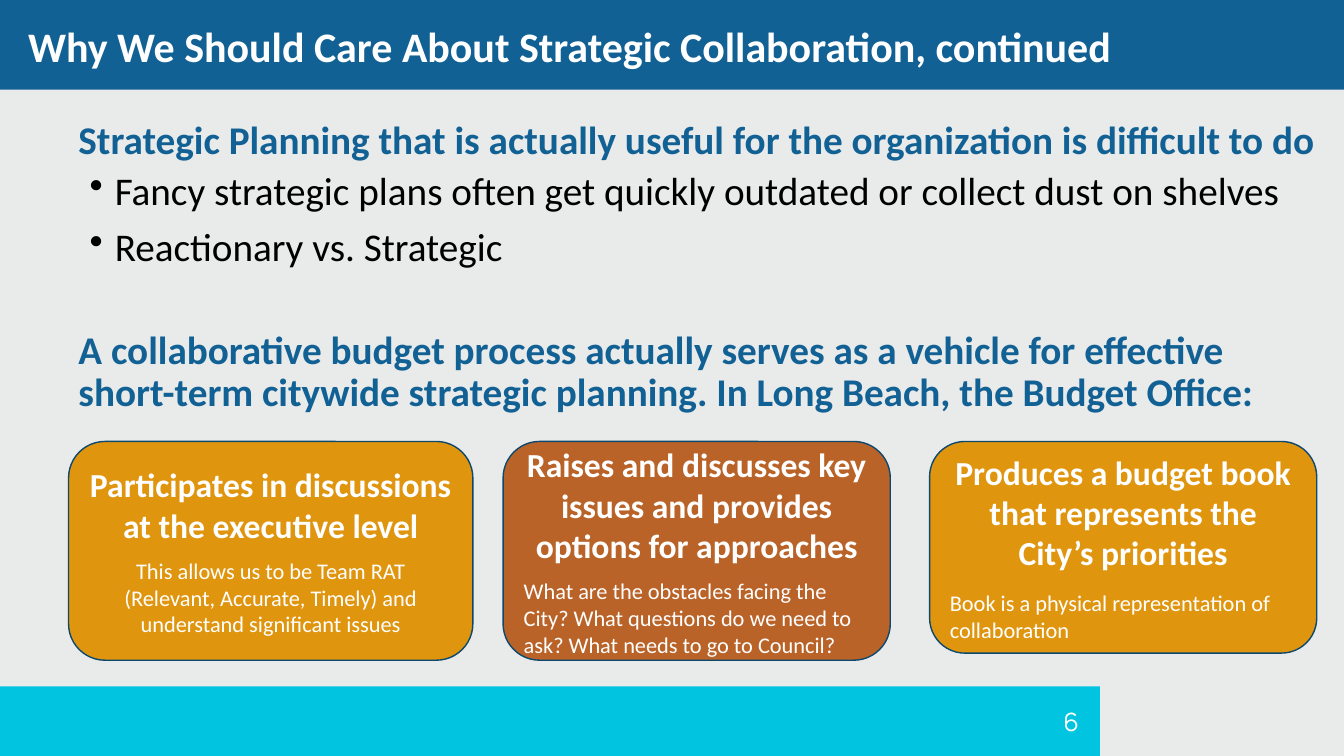
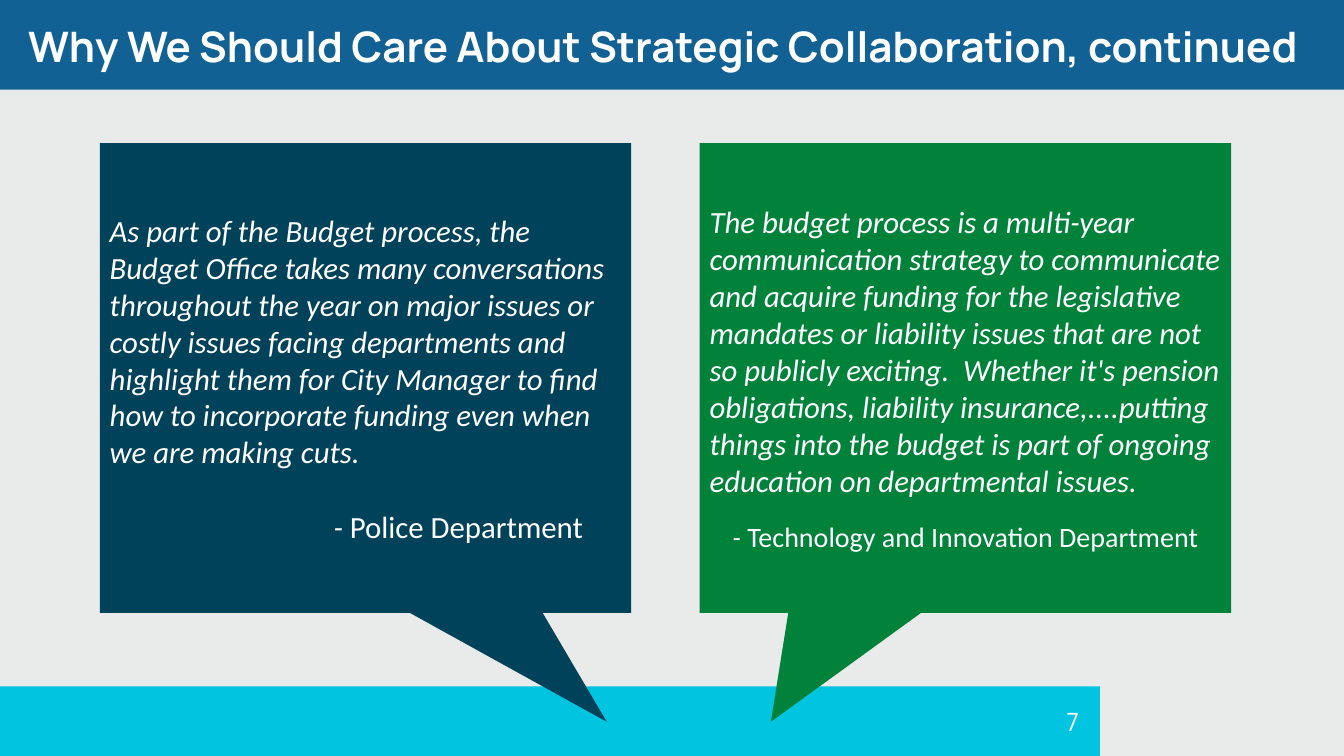
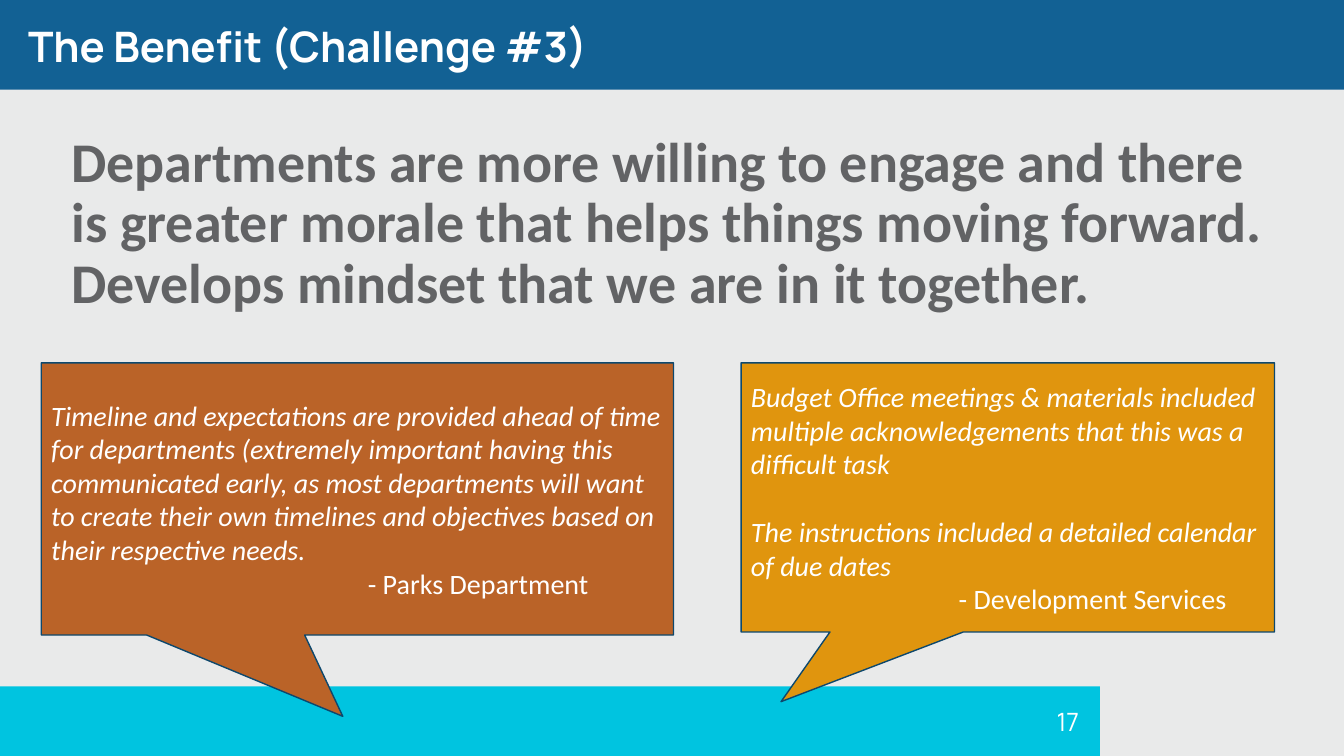
from dataclasses import dataclass

from lxml import etree
from pptx import Presentation
from pptx.dml.color import RGBColor
from pptx.enum.shapes import MSO_SHAPE
from pptx.enum.text import MSO_ANCHOR, PP_ALIGN
from pptx.oxml.ns import qn
from pptx.util import Inches, Pt

RECT = MSO_SHAPE.RECTANGLE
ROUND = MSO_SHAPE.ROUNDED_RECTANGLE
CALLOUT = MSO_SHAPE.RECTANGULAR_CALLOUT
LEFT, CENTER, RIGHT = PP_ALIGN.LEFT, PP_ALIGN.CENTER, PP_ALIGN.RIGHT
MIDDLE = MSO_ANCHOR.MIDDLE

WHITE = RGBColor(0xFF, 0xFF, 0xFF)
BLACK = RGBColor(0x00, 0x00, 0x00)
PALE = RGBColor(0xE9, 0xEA, 0xEA)
CYAN = RGBColor(0x00, 0xC4, 0xE0)
BLUE = RGBColor(0x12, 0x61, 0x94)
NAVY = RGBColor(0x00, 0x42, 0x5A)
EDGE = RGBColor(0x0D, 0x48, 0x6D)
GOLD = RGBColor(0xE0, 0x95, 0x0E)
RUST = RGBColor(0xBA, 0x63, 0x28)
GREEN = RGBColor(0x00, 0x82, 0x3B)
GREY = RGBColor(0x62, 0x63, 0x65)

SANS = "Calibri"
BRAND = "Manrope"
WIDTH, HEIGHT = 13.33, 7.5
TIGHT = 0.9


@dataclass
class Card:
    left: float
    width: float
    height: float
    fill: RGBColor
    head: str
    note: str
    gap: float
    align: PP_ALIGN


@dataclass
class Quote:
    box: tuple[float, float, float, float]
    tip: tuple[float, float]
    fill: RGBColor
    lines: list[str]
    source: str
    size: float = 20
    source_size: float = 20
    gap: float = 0
    indent: float = 0
    align: PP_ALIGN = LEFT
    slant_dash: bool = False
    edge: RGBColor | None = EDGE


CARDS = [
    Card(0.68, 4.01, 2.17, GOLD,
         "Participates in discussions at the executive level",
         "This allows us to be Team RAT (Relevant, Accurate, Timely) and "
         "understand significant issues", 8.5, CENTER),
    Card(4.99, 3.84, 2.17, RUST,
         "Raises and discusses key issues and provides options for approaches",
         "What are the obstacles facing the City? What questions do we need "
         "to ask? What needs to go to Council?", 8.5, LEFT),
    Card(9.22, 3.84, 2.1, GOLD,
         "Produces a budget book that represents the City’s priorities",
         "Book is a physical representation of collaboration", 12.2, LEFT),
]

CITY_QUOTES = [
    Quote((6.94, 1.42, 5.27, 4.66), (-0.366, 0.732), GREEN,
          ["The budget process is a multi-year communication strategy to "
           "communicate and acquire funding for the legislative mandates or "
           "liability issues that are not so publicly exciting.  Whether it's "
           "pension obligations, liability insurance,....putting things into "
           "the budget is part of ongoing education on departmental issues."],
          "Technology and Innovation Department", size=22, gap=14.6,
          align=CENTER, slant_dash=True, edge=None),
    Quote((0.99, 1.42, 5.27, 4.66), (0.454, 0.732), NAVY,
          ["As part of the Budget process, the Budget Office takes many "
           "conversations throughout the year on major issues or costly "
           "issues facing departments and highlight them for City Manager to "
           "find how to incorporate funding even when we are making cuts."],
          "Police Department", size=22, source_size=22, gap=26.8,
          indent=2.22, slant_dash=True, edge=None),
]

GAIN_QUOTES = [
    Quote((7.35, 3.6, 5.29, 2.67), (-0.425, 0.759), GOLD,
          ["Budget Office meetings & materials included multiple "
           "acknowledgements that this was a difficult task",
           "The instructions included a detailed calendar of due dates"],
          "Development Services", indent=2.06),
    Quote((0.41, 3.6, 6.27, 2.7), (-0.023, 0.799), RUST,
          ["Timeline and expectations are provided ahead of time for "
           "departments (extremely important having this communicated early, "
           "as most departments will want to create their own timelines and "
           "objectives based on their respective needs."],
          "Parks Department", indent=3.14),
]


def add_text(frame, text: str, *, size: float, color: RGBColor = WHITE,
             font: str = SANS, bold: bool = False, italic: bool = False,
             align: PP_ALIGN = LEFT, before: float = 0, line: float = 1,
             indent: float = 0, bullet: bool = False, lead: str = "") -> None:
    """Add a paragraph; lead is set in italics ahead of the text."""
    first = frame.paragraphs[0]
    para = frame.add_paragraph() if first.runs else first
    props = para._p.get_or_add_pPr()
    if indent:
        props.set("marL", str(Inches(indent)))
    if bullet:
        props.set("indent", str(-Inches(indent)))
        etree.SubElement(props, qn("a:buChar")).set("char", "•")
    para.alignment = align
    para.line_spacing = line
    para.space_before = Pt(before)
    for words, slant in ((lead, True), (text, italic)):
        if words:
            run = para.add_run()
            run.text = words
            run.font.name = font
            run.font.size = Pt(size)
            run.font.bold = bold
            run.font.italic = slant
            run.font.color.rgb = color


def add_frame(slide, left: float, top: float, width: float, height: float):
    box = slide.shapes.add_textbox(
        Inches(left), Inches(top), Inches(width), Inches(height))
    box.text_frame.word_wrap = True
    return box.text_frame


def add_shape(slide, kind: MSO_SHAPE, left: float, top: float, width: float,
              height: float, fill: RGBColor, edge: RGBColor | None = None):
    shape = slide.shapes.add_shape(
        kind, Inches(left), Inches(top), Inches(width), Inches(height))
    shape.shadow.inherit = False
    shape.fill.solid()
    shape.fill.fore_color.rgb = fill
    if edge is None:
        shape.line.fill.background()
    else:
        shape.line.color.rgb = edge
        shape.line.width = Pt(1)
    shape.text_frame.word_wrap = True
    shape.text_frame.vertical_anchor = MIDDLE
    return shape


def add_slide(deck, title: str, number: int, font: str = BRAND):
    """Add a slide with its bands, title and page number."""
    slide = deck.slides.add_slide(deck.slide_layouts[6])
    add_shape(slide, RECT, 0, 6.81, 10.91, 0.69, CYAN)
    add_shape(slide, RECT, 0, 0, WIDTH, 0.89, BLUE)
    add_text(add_frame(slide, 0.18, 0.21, 13, 0.49), title,
             size=30, font=font, bold=True, line=TIGHT)
    add_text(add_frame(slide, 0.18, 6.96, 10.62, 0.4), str(number),
             size=18, font=BRAND, align=RIGHT)
    return slide


def add_card(slide, card: Card) -> None:
    shape = add_shape(slide, ROUND, card.left, 4.38, card.width, card.height,
                      card.fill, EDGE)
    add_text(shape.text_frame, card.head, size=24, bold=True, align=CENTER)
    add_text(shape.text_frame, card.note, size=16, align=card.align,
             before=card.gap)


def add_quote(slide, quote: Quote) -> None:
    shape = add_shape(slide, CALLOUT, *quote.box, quote.fill, quote.edge)
    shape.adjustments[0], shape.adjustments[1] = quote.tip
    frame = shape.text_frame
    for index, text in enumerate(quote.lines):
        add_text(frame, text, size=quote.size, italic=True,
                 before=24.4 if index else 0)
    dash = "- "
    lead, plain = (dash, "") if quote.slant_dash else ("", dash)
    add_text(frame, plain + quote.source, lead=lead, size=quote.source_size,
             align=quote.align, before=quote.gap, indent=quote.indent)


def add_plan(deck, title: str) -> None:
    slide = add_slide(deck, title, 6, SANS)
    points = add_frame(slide, 0.79, 1.65, 12.14, 1.03)
    for index, text in enumerate((
            "Fancy strategic plans often get quickly outdated or collect "
            "dust on shelves",
            "Reactionary vs. Strategic")):
        add_text(points, text, size=28, color=BLACK, line=TIGHT, indent=0.25,
                 bullet=True, before=10 if index else 0)
    heads = (
        (1.15, 12.51, 0.49,
         "Strategic Planning that is actually useful for the organization is "
         "difficult to do"),
        (3.23, 12.25, 0.9,
         "A collaborative budget process actually serves as a vehicle for "
         "effective short-term citywide strategic planning. In Long Beach, "
         "the Budget Office:"),
    )
    for top, width, height, text in heads:
        add_text(add_frame(slide, 0.68, top, width, height), text, size=28,
                 color=BLUE, bold=True, line=TIGHT)
    for card in CARDS:
        add_card(slide, card)


def main() -> None:
    deck = Presentation()
    deck.slide_width, deck.slide_height = Inches(WIDTH), Inches(HEIGHT)
    back = deck.slide_master.background.fill
    back.solid()
    back.fore_color.rgb = PALE

    title = "Why We Should Care About Strategic Collaboration, continued"
    add_plan(deck, title)

    city = add_slide(deck, title, 7)
    for quote in CITY_QUOTES:
        add_quote(city, quote)

    gain = add_slide(deck, "The Benefit (Challenge #3)", 17)
    add_text(add_frame(gain, 0.61, 1.28, 12.15, 2),
             "Departments are more willing to engage and there is greater "
             "morale that helps things moving forward. Develops mindset that "
             "we are in it together.",
             size=40, color=GREY, bold=True, line=TIGHT)
    for quote in GAIN_QUOTES:
        add_quote(gain, quote)

    deck.save("out.pptx")


if __name__ == "__main__":
    main()
